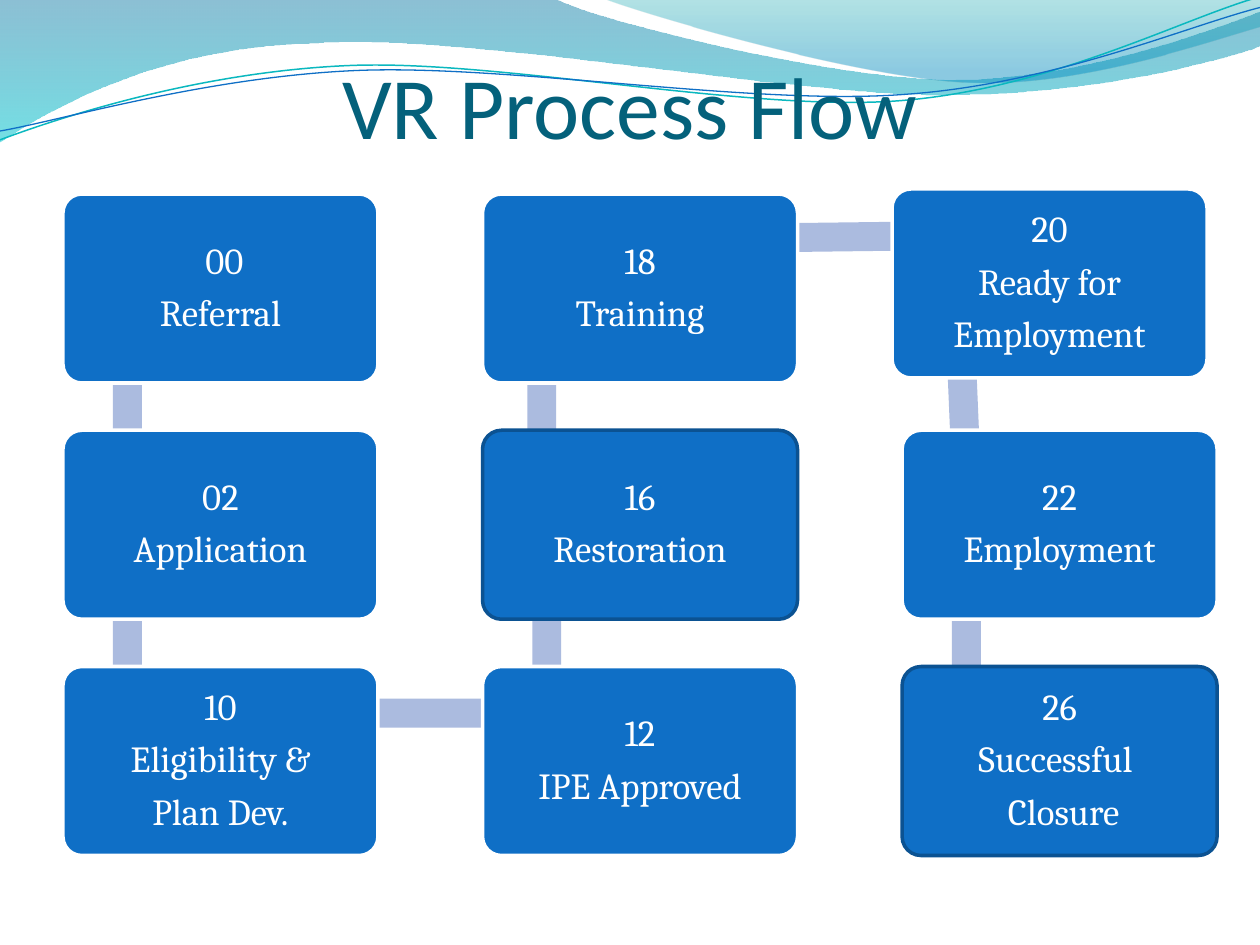
from math import atan2, cos, degrees, hypot, radians, sin

from lxml.etree import SubElement
from pptx import Presentation
from pptx.dml.color import RGBColor
from pptx.enum.shapes import MSO_SHAPE
from pptx.enum.text import MSO_ANCHOR, PP_ALIGN
from pptx.oxml.ns import qn
from pptx.util import Inches, Pt

WHITE = RGBColor(0xFF, 0xFF, 0xFF)
BLUE = RGBColor(0x0F, 0x6F, 0xC6)
NAVY = RGBColor(0x0B, 0x52, 0x92)
BAR = RGBColor(0xAB, 0xBB, 0xDF)
TITLE = RGBColor(0x04, 0x61, 0x7B)
AQUA = RGBColor(0x0A, 0xB8, 0xBF)
DEEP = RGBColor(0x00, 0x74, 0xA1)
CYAN = RGBColor(0x00, 0xC6, 0xCF)
TEAL = RGBColor(0x00, 0xA1, 0xA9)
SKY = RGBColor(0x00, 0x8B, 0xBF)

# Wave outlines: a start point, then lines (x, y) or curves (two handles and an end)
BANDS = [
    ([(0, 0), (4.4, -0.01), (4.76, 0.17, 6.64, 0.63, 7.58, 0.63),
      (8.53, 0.63, 9.58, 0.26, 10, 0.09), (10.01, 0.36),
      (9.83, 0.44, 8.7, 0.76, 7.46, 0.75), (6.22, 0.75, 3.82, 0.28, 2.57, 0.34),
      (1.29, 0.36, 0.46, 0.83, -0.01, 1.13), (0, 0)],
     [(0, DEEP, 45), (1, CYAN, 55)]),
    ([(4.79, -0.01), (5.09, 0.11, 6.82, 0.62, 7.69, 0.65),
      (8.56, 0.69, 9.61, 0.32, 10, 0.21), (10, 0), (4.79, -0.01)],
     [(0, TEAL, 30), (0.8, SKY, 45)]),
]
# Strokes: outline, colour, width, pivot of the tilt
LINES = [
    ([(0, 1.11), (0.48, 0.93, 1.58, 0.57, 2.77, 0.52),
      (3.95, 0.47, 5.93, 0.89, 7.13, 0.8), (8.33, 0.71, 9.38, 0.15, 9.98, -0.02)],
     AQUA, 0.85, (4.99, 0.58)),
    ([(0, 1.04), (0.47, 0.96, 1.64, 0.61, 2.83, 0.56),
      (4.03, 0.51, 5.97, 0.84, 7.17, 0.75), (8.36, 0.67, 9.41, 0.21, 10, 0.06)],
     BLUE, 0.75, (5, 0.59)),
]
TILT = 2.7

# Steps in order: column, row, text lines, outline, box shift, bar shift
STEPS = [
    (0, 0, [" 00", "Referral"], WHITE, (0, 0), (0, 0)),
    (0, 1, ["02", "Application"], WHITE, (0, 0), (0, 0)),
    (0, 2, ["10", "Eligibility &", "Plan Dev."], WHITE, (0, 0), (0, 0)),
    (1, 2, ["12", "IPE Approved"], WHITE, (0, 0), (0, 0)),
    (1, 1, ["16", "Restoration"], NAVY, (0, 0), (-0.04, 0.43)),
    (1, 0, ["18", "Training"], WHITE, (0, 0), (0, 0)),
    (2, 0, ["20", "Ready for", "Employment"], WHITE, (-0.08, -0.04), (0, 0)),
    (2, 1, ["22", "Employment"], WHITE, (0, 0), (0, 0)),
    (2, 2, ["26", "Successful ", " Closure"], NAVY, (0, 0), (0, 0)),
]


def turn(spot, pivot, angle):
    """Turn a point clockwise about a pivot."""
    x, y = spot[0] - pivot[0], spot[1] - pivot[1]
    c, s = cos(radians(angle)), sin(radians(angle))
    return pivot[0] + x * c - y * s, pivot[1] + x * s + y * c


def outline(slide, box, route, close, pivot=(0, 0), tilt=0):
    left, top, wide, _ = box
    unit = wide / 10
    spots = [part[n:n + 2] for part in route for n in range(0, len(part), 2)]
    pts = [(Inches(left + x * unit), Inches(top + y * unit))
           for x, y in (turn(spot, pivot, tilt) for spot in spots)]
    pen = slide.shapes.build_freeform(*pts[0], scale=1.0)
    pen.add_line_segments(pts[1:], close=close)
    shape = pen.convert_to_shape()
    shape.rotation = -tilt
    shape.shadow.inherit = False
    # Join each pair of handles and its end into one curve
    legs = iter(list(shape._element.iter(qn("a:lnTo"))))
    for part in route[1:]:
        leg = next(legs)
        if len(part) == 6:
            curve = SubElement(leg.getparent(), qn("a:cubicBezTo"))
            leg.addprevious(curve)
            for piece in (leg, next(legs), next(legs)):
                curve.append(piece[0])
                piece.getparent().remove(piece)
    return shape


def add_waves(slide, box):
    # Translucent bands
    for route, stops in BANDS:
        band = outline(slide, box, route, True)
        band.line.fill.background()
        band.fill.gradient()
        band.fill.gradient_angle = 270
        for stop, (pos, color, _) in zip(band.fill.gradient_stops, stops):
            stop.position = pos
            stop.color.rgb = color
        tints = band._element.spPr.iter(qn("a:srgbClr"))
        for tint, (_, _, alpha) in zip(list(tints), stops):
            SubElement(tint, qn("a:alpha")).set("val", str(alpha * 1000))
    # Thin strokes
    for route, color, width, pivot in LINES:
        wave = outline(slide, box, route, False, pivot, TILT)
        wave.fill.background()
        wave.line.color.rgb = color
        wave.line.width = Pt(width)


def add_run(para, text, font, size, color):
    para.alignment = PP_ALIGN.CENTER
    run = para.add_run()
    run.text = text
    run.font.name = font
    run.font.size = Pt(size)
    run.font.color.rgb = color


def add_title(slide, box):
    frame = slide.shapes.add_textbox(*map(Inches, box)).text_frame
    frame.word_wrap = True
    frame.vertical_anchor = MSO_ANCHOR.BOTTOM
    frame.margin_left = frame.margin_right = frame.margin_bottom = 0
    frame.margin_top = Inches(0.05)
    add_run(frame.paragraphs[0], "VR Process Flow", "Calibri", 50, TITLE)


def add_bar(slide, start, end, thick):
    (x, y), (p, q) = start, end
    size = hypot(p - x, q - y)
    bar = slide.shapes.add_shape(
        MSO_SHAPE.RECTANGLE, Inches((x + p - size) / 2),
        Inches((y + q - thick) / 2), Inches(size), Inches(thick))
    bar.rotation = degrees(atan2(q - y, p - x))
    bar.shadow.inherit = False
    bar.fill.solid()
    bar.fill.fore_color.rgb = BAR
    bar.line.fill.background()


def add_step(slide, box, lines, edge):
    card = slide.shapes.add_shape(MSO_SHAPE.ROUNDED_RECTANGLE, *map(Inches, box))
    card.adjustments[0] = 0.1
    card.shadow.inherit = False
    card.fill.solid()
    card.fill.fore_color.rgb = BLUE
    card.line.color.rgb = edge
    card.line.width = Pt(2)
    frame = card.text_frame
    frame.word_wrap = True
    frame.vertical_anchor = MSO_ANCHOR.MIDDLE
    frame.margin_left = frame.margin_right = Inches(0.05)
    frame.margin_top = frame.margin_bottom = Inches(0.05)
    for n, text in enumerate(lines):
        para = frame.add_paragraph() if n else frame.paragraphs[0]
        add_run(para, text, "Cambria", 21, WHITE)
        para.line_spacing = 0.9
        # Space after as a share of the line
        after = SubElement(para._p.get_or_add_pPr(), qn("a:spcAft"))
        SubElement(after, qn("a:spcPct")).set("val", "35000")


def add_flow(slide, box):
    left, top, wide, high = box
    card_w, card_h = 2.5, 1.5
    col, row = (wide - card_w) / 2, (high - card_h) / 2
    spots = [(left + c * col + dx, top + r * row + dy)
             for c, r, _, _, (dx, dy), _ in STEPS]
    joints = [(x + 0.51, y + 0.37) for x, y in spots]
    for n, (_, _, lines, edge, _, (dx, dy)) in enumerate(STEPS):
        # The bar to the next step lies behind both cards
        if n + 1 < len(STEPS):
            ends = [(x + dx, y + dy) for x, y in joints[n:n + 2]]
            add_bar(slide, *ends, 0.23)
        add_step(slide, (*spots[n], card_w, card_h), lines, edge)


def main():
    deck = Presentation()
    deck.slide_width, deck.slide_height = Inches(10), Inches(7.5)
    slide = deck.slides.add_slide(deck.slide_layouts[6])
    add_waves(slide, (0, 0, 10, 1.14))
    add_title(slide, (0.5, 0.25, 9, 1))
    add_flow(slide, (0.5, 1.54, 9.16, 5.25))
    deck.save("out.pptx")


if __name__ == "__main__":
    main()
